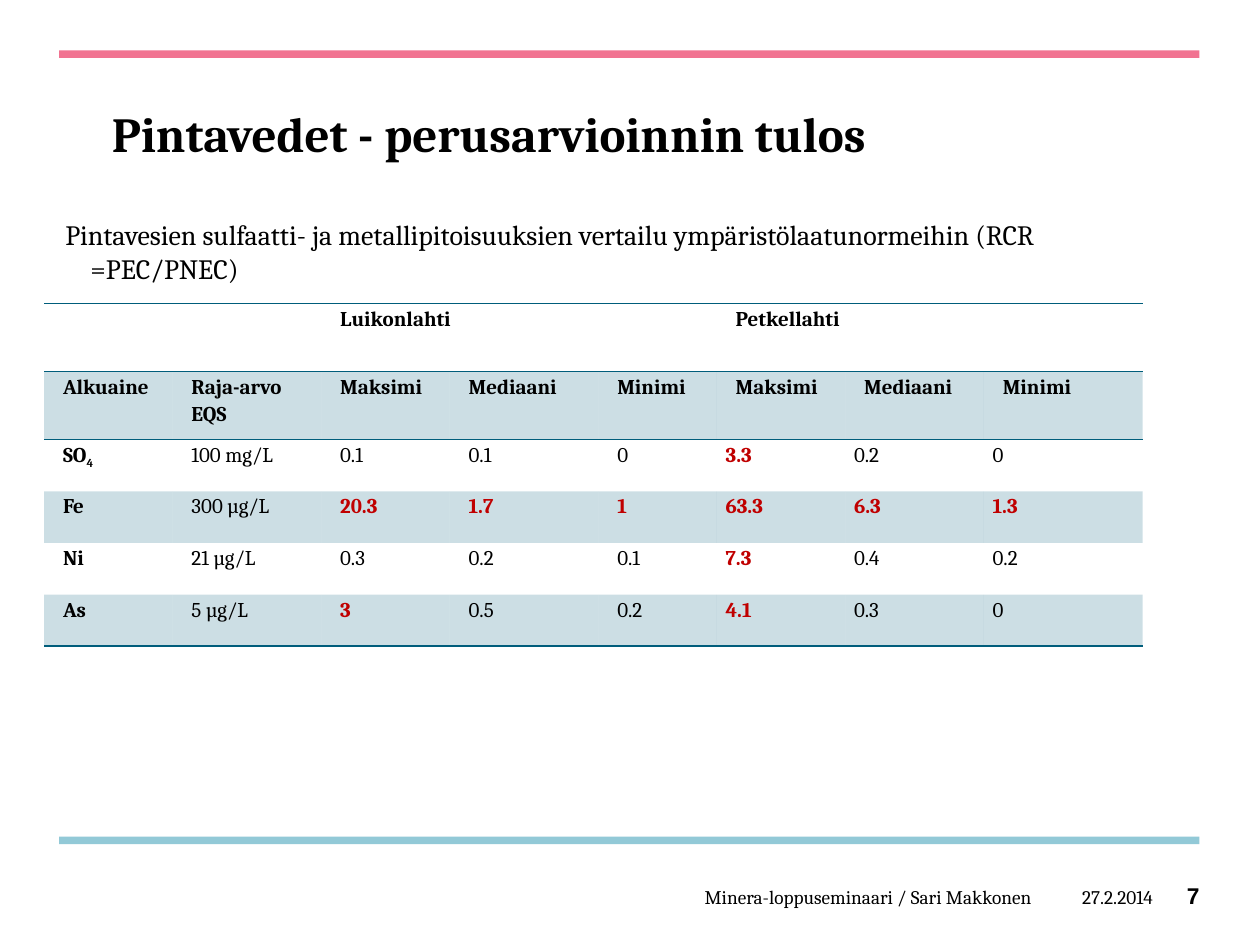
from lxml import etree
from pptx import Presentation
from pptx.dml.color import RGBColor
from pptx.enum.shapes import MSO_SHAPE as Shape
from pptx.enum.text import MSO_ANCHOR as Anchor, PP_ALIGN as Align
from pptx.oxml.ns import qn
from pptx.util import Inches, Pt

COLORS = {"pink": "F17391", "blue": "92C9D7", "teal": "005D7B",
          "text": "000000", "alert": "C00000"}
NO_STYLE_NO_GRID = "{2D5ABB26-0587-4C30-8999-92F81FD0307C}"

TITLE = "Pintavedet - perusarvioinnin tulos"
INTRO = ("Pintavesien sulfaatti- ja metallipitoisuuksien vertailu "
         "ympäristölaatunormeihin (RCR =PEC/PNEC)")
BARS = [(0.4, "pink"), (6.64, "blue")]
# text, left, top, width, height, size, font, bold, anchor, top inset
FOOTERS = [
    ("Minera-loppuseminaari / Sari Makkonen", 3.34, 6.98, 4.85, 0.27, 11, "Cambria", False, Anchor.MIDDLE, 0),
    ("27.2.2014", 8.19, 6.98, 0.96, 0.27, 11, "Cambria", False, Anchor.MIDDLE, 0),
    ("7", 9.13, 6.98, 0.39, 0.27, 13, "Arial", True, Anchor.TOP, 0.02),
]

SITES = {2: "Luikonlahti", 5: "Petkellahti"}  # first column of each site
SITE_SPAN = 3
STATISTICS = ["Maksimi", "Mediaani", "Minimi"]
HEADINGS = ["Alkuaine", "Raja-arvo EQS"] + STATISTICS * len(SITES)
ELEMENTS = [
    ("SO4", "100 mg/L", 0.1, 0.1, 0, 3.3, 0.2, 0),
    ("Fe", "300 µg/L", 20.3, 1.7, 1, 63.3, 6.3, 1.3),
    ("Ni", "21 µg/L", 0.3, 0.2, 0.1, 7.3, 0.4, 0.2),
    ("As", "5 µg/L", 3, 0.5, 0.2, 4.1, 0.3, 0),
]
RISK_LIMIT = 1  # ratios from here up are shown in red
COLUMN_WIDTHS = [1.02, 1.18, 1.02, 1.18, 0.94, 1.02, 1.1, 1.26]
ROW_HEIGHTS = [0.54] * 2 + [0.41] * len(ELEMENTS)


def color(name):
    return RGBColor.from_string(COLORS[name])


def set_font(font, size, name="Cambria", bold=False, color_name="text"):
    font.size, font.name, font.bold = Pt(size), name, bold
    font.color.rgb = color(color_name)


def add_text(slide, text, left, top, width, height, size, name="Cambria",
             bold=False, anchor=Anchor.TOP, insets=(0.1, 0.05, 0.1, 0.05)):
    box = slide.shapes.add_textbox(*map(Inches, (left, top, width, height)))
    frame = box.text_frame
    frame.word_wrap = True
    frame.vertical_anchor = anchor
    (frame.margin_left, frame.margin_top,
     frame.margin_right, frame.margin_bottom) = map(Inches, insets)
    frame.text = text
    paragraph = frame.paragraphs[0]
    set_font(paragraph.runs[0].font, size, name, bold)
    return paragraph


def add_border(cell, side):
    line = etree.SubElement(cell._tc.get_or_add_tcPr(), qn(f"a:{side}"), w=str(Pt(1)))
    fill = etree.SubElement(line, qn("a:solidFill"))
    etree.SubElement(fill, qn("a:srgbClr"), val=COLORS["teal"])


def tint(cell):
    cell.fill.solid()
    cell.fill.fore_color.rgb = color("teal")
    shade = cell._tc.tcPr.find(".//" + qn("a:solidFill") + "[last()]/" + qn("a:srgbClr"))
    for fill in cell._tc.tcPr.findall(qn("a:solidFill")):
        shade = fill.find(qn("a:srgbClr"))
    etree.SubElement(shade, qn("a:alpha"), val="20000")


def write_cell(cell, text, inset, bold, color_name):
    cell.margin_left = cell.margin_right = Inches(inset)
    cell.margin_top = cell.margin_bottom = 0
    cell.text = text
    paragraph = cell.text_frame.paragraphs[0]
    paragraph.line_spacing = 1.15
    paragraph.space_after = Pt(10)
    if text == "SO4":  # the digit is a subscript
        paragraph.text = "SO"
        digit = paragraph.add_run()
        digit.text = "4"
        digit.font._element.set("baseline", "-25000")
    for run in paragraph.runs:
        set_font(run.font, 12, bold=bold, color_name=color_name)


def add_ratio_table(slide):
    site_row = [SITES.get(column, "") for column in range(len(HEADINGS))]
    rows = [site_row, HEADINGS] + ELEMENTS
    table = slide.shapes.add_table(
        len(rows), len(HEADINGS), Inches(0.35), Inches(2.41),
        Inches(sum(COLUMN_WIDTHS)), Inches(sum(ROW_HEIGHTS))).table
    table._tbl.tblPr.find(qn("a:tableStyleId")).text = NO_STYLE_NO_GRID
    table.first_row = table.horz_banding = False
    for column, width in zip(table.columns, COLUMN_WIDTHS):
        column.width = Inches(width)
    for row, height in zip(table.rows, ROW_HEIGHTS):
        row.height = Inches(height)

    for first in SITES:
        table.cell(0, first).merge(table.cell(0, first + SITE_SPAN - 1))
    for r, values in enumerate(rows):
        for c, value in enumerate(values):
            cell = table.cell(r, c)
            if r in (0, 1):
                add_border(cell, "lnT")
            if r in (0, len(rows) - 1):
                add_border(cell, "lnB")
            if r % 2:
                tint(cell)
            else:
                cell.fill.background()
            if value == "":
                continue
            at_risk = not isinstance(value, str) and value >= RISK_LIMIT
            inset = 0.07 if r > 1 and c >= 5 else 0.15
            write_cell(cell, str(value), inset, r < 2 or c == 0 or at_risk,
                       "alert" if at_risk else "text")


def main():
    presentation = Presentation()
    presentation.slide_width, presentation.slide_height = Inches(10), Inches(7.5)
    slide = presentation.slides.add_slide(presentation.slide_layouts[6])

    # Bars above and below the content
    for top, name in BARS:
        bar = slide.shapes.add_shape(
            Shape.RECTANGLE, Inches(0.47), Inches(top), Inches(9.05), Inches(0.06))
        bar.shadow.inherit = False
        bar.fill.solid()
        bar.fill.fore_color.rgb = color(name)
        bar.line.fill.background()

    # Title and introduction
    title = add_text(slide, TITLE, 0.79, 0.72, 8.74, 0.67, 28, bold=True,
                     anchor=Anchor.MIDDLE)
    title.line_spacing = Pt(34)
    intro = add_text(slide, INTRO, 0.42, 1.68, 8.36, 0.7, 16)
    properties = intro._p.get_or_add_pPr()
    properties.set("marL", str(Inches(0.2)))
    properties.set("indent", str(Inches(-0.2)))

    add_ratio_table(slide)

    # Footer
    for *text_and_style, inset in FOOTERS:
        paragraph = add_text(slide, *text_and_style, insets=(0, inset, 0, 0))
        paragraph.alignment = Align.RIGHT

    presentation.save("out.pptx")


if __name__ == "__main__":
    main()
